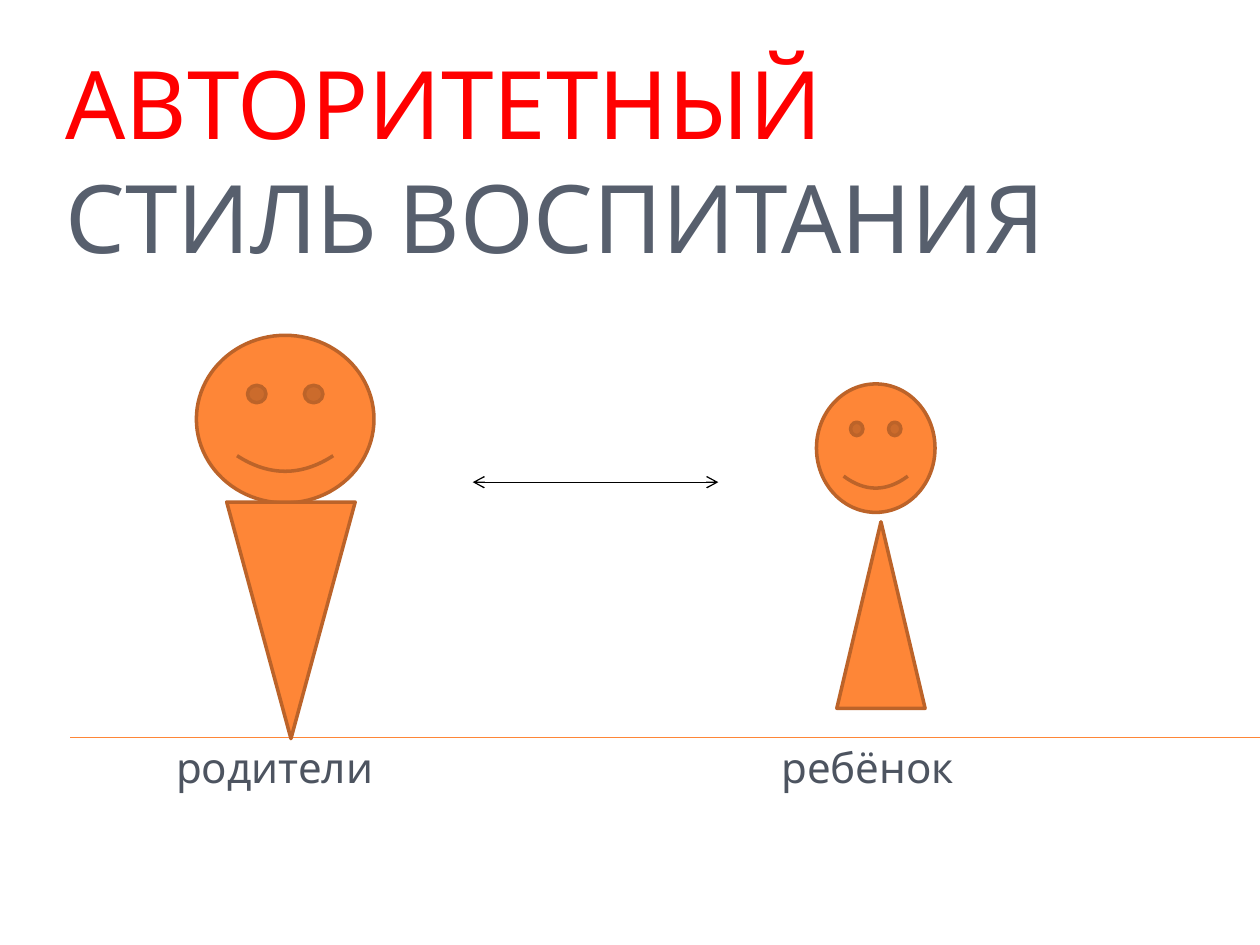
from lxml.etree import SubElement
from pptx import Presentation
from pptx.dml.color import RGBColor
from pptx.enum.shapes import MSO_CONNECTOR, MSO_SHAPE
from pptx.enum.text import MSO_ANCHOR
from pptx.oxml.ns import qn
from pptx.util import Cm, Pt

ORANGE = RGBColor(0xFE, 0x86, 0x37)
BROWN = RGBColor(0xBC, 0x63, 0x29)
RED = RGBColor(0xFF, 0x00, 0x00)
SLATE = RGBColor(0x57, 0x5F, 0x6D)
DARK_SLATE = RGBColor(0x4D, 0x54, 0x60)
BLACK = RGBColor(0x00, 0x00, 0x00)


class SlideBuilder:
    """Holds the current slide and its style; all lengths are centimetres."""

    font = "Cabin"

    def __init__(self, slide):
        self.slide = slide

    def text(self, box, lines, size, anchor=MSO_ANCHOR.TOP):
        """Add a text box; lines is a list of (text, colour) pairs."""
        tf = self.slide.shapes.add_textbox(*map(Cm, box)).text_frame
        tf.word_wrap = True
        tf.vertical_anchor = anchor
        p = tf.paragraphs[0]
        p.font.name = self.font
        p.font.size = Pt(size)
        for i, (text, color) in enumerate(lines):
            if i:
                p.add_line_break()
            r = p.add_run()
            r.text = text
            r.font.name = self.font
            r.font.size = Pt(size)
            r.font.color.rgb = color

    def shape(self, kind, box, rotation=0):
        sp = self.slide.shapes.add_shape(kind, *map(Cm, box))
        sp.shadow.inherit = False
        sp.rotation = rotation
        sp.fill.solid()
        sp.fill.fore_color.rgb = ORANGE
        sp.line.color.rgb = BROWN
        sp.line.width = Pt(2)

    def line(self, x1, x2, y, color, arrows=False):
        """Add a horizontal line, with open arrowheads at both ends if asked."""
        cxn = self.slide.shapes.add_connector(
            MSO_CONNECTOR.STRAIGHT, Cm(x1), Cm(y), Cm(x2), Cm(y))
        cxn.line.color.rgb = color
        cxn.line.width = Pt(0.75)
        if arrows:
            ln = cxn.line._get_or_add_ln()
            for end in ("a:headEnd", "a:tailEnd"):
                SubElement(ln, qn(end), type="arrow")
        SubElement(cxn._element.spPr, qn("a:effectLst"))

    def person(self, head, body, rotation=0):
        self.shape(MSO_SHAPE.SMILEY_FACE, head)
        self.shape(MSO_SHAPE.ISOSCELES_TRIANGLE, body, rotation)


def main():
    prs = Presentation()
    prs.slide_width, prs.slide_height = Cm(25.4), Cm(19.05)
    s = SlideBuilder(prs.slides.add_slide(prs.slide_layouts[6]))

    s.line(1.42, 25.4, 14.86, ORANGE)
    s.text((1.07, 0.79, 23.5, 16.08),
           [("АВТОРИТЕТНЫЙ", RED), ("СТИЛЬ ВОСПИТАНИЯ", SLATE)], 54)
    for x, label in ((3.3, "родители"), (15.5, "ребёнок")):
        s.text((x, 14.68, 5, 1.4), [(label, DARK_SLATE)], 24, MSO_ANCHOR.BOTTOM)

    s.person((3.96, 6.76, 3.58, 3.38), (4.57, 10.12, 2.59, 4.77), rotation=180)
    s.person((16.46, 7.74, 2.39, 2.59), (16.87, 10.52, 1.78, 3.76))
    s.line(9.53, 14.48, 9.72, BLACK, arrows=True)

    prs.save("out.pptx")


if __name__ == "__main__":
    main()
